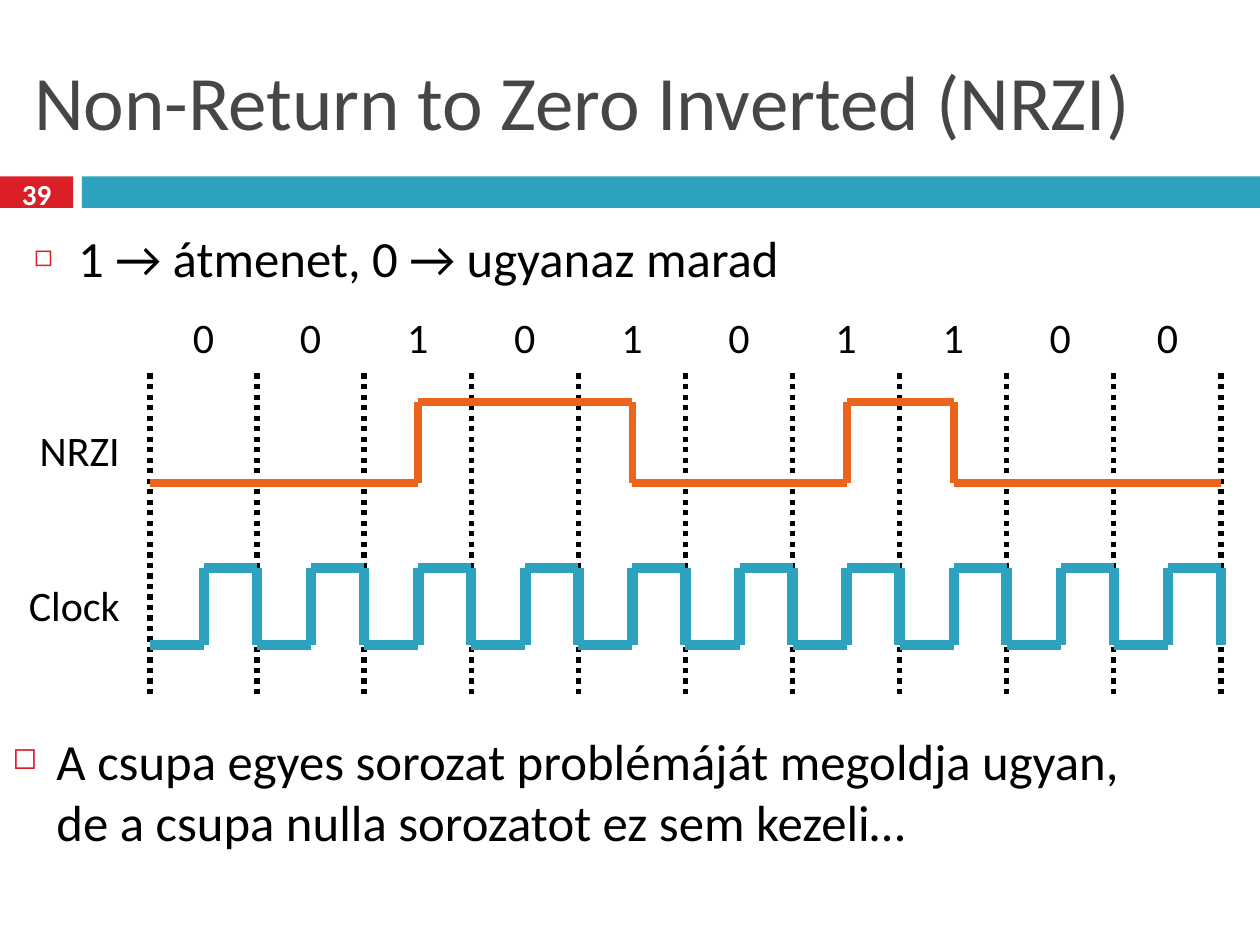
from itertools import pairwise
from lxml.etree import SubElement
from pptx import Presentation
from pptx.dml.color import RGBColor
from pptx.enum.dml import MSO_LINE
from pptx.enum.shapes import MSO_CONNECTOR, MSO_SHAPE
from pptx.enum.text import MSO_ANCHOR, MSO_AUTO_SIZE, PP_ALIGN
from pptx.oxml.ns import qn
from pptx.util import Inches, Pt

COLORS = {
    "title": "464646",
    "text": "000000",
    "white": "FFFFFF",
    "accent": "DA1F28",
    "teal": "2DA2BF",
    "orange": "EB641B",
}
FONT = "Calibri"
BITS = "0010101100"


def rgb(name):
    return RGBColor.from_string(COLORS[name])


def place(sp, box):
    sp.left, sp.top, sp.width, sp.height = [Inches(v) for v in box]


def add_run(p, text, size, color="text", bold=False):
    r = p.add_run()
    r.text = text
    r.font.name = FONT
    r.font.size = Pt(size)
    r.font.bold = bold
    r.font.color.rgb = rgb(color)


def add_line(s, start, end, color, width, dash=None):
    sp = s.shapes.add_connector(
        MSO_CONNECTOR.STRAIGHT, *[Inches(v) for v in (*start, *end)])
    sp.line.color.rgb = rgb(color)
    sp.line.width = Pt(width)
    if dash:
        sp.line.dash_style = dash
    SubElement(sp._element.spPr, qn("a:effectLst"))


def add_wave(s, points, color, width):
    for start, end in pairwise(points):
        add_line(s, start, end, color, width)


def add_label(s, box, text, align):
    sp = s.shapes.add_textbox(*[Inches(v) for v in box])
    tf = sp.text_frame
    tf.word_wrap = False
    p = tf.paragraphs[0]
    p.alignment = align
    add_run(p, text, 24)


def fill_bullet(tf, lines):
    tf.word_wrap = True
    tf.auto_size = MSO_AUTO_SIZE.NONE
    p = tf.paragraphs[0]
    p.space_before = Pt(7)
    for i, line in enumerate(lines):
        if i:
            p.add_line_break()
        add_run(p, line, 29)
    pPr = p._p.get_or_add_pPr()
    pPr.set("marL", str(Inches(0.35)))
    pPr.set("indent", str(Inches(-0.35)))
    clr = SubElement(pPr, qn("a:buClr"))
    SubElement(clr, qn("a:srgbClr"), val=COLORS["accent"])
    SubElement(pPr, qn("a:buSzPct"), val="60000")
    SubElement(pPr, qn("a:buChar"), char="◻")


def add_title(s, box):
    sp = s.shapes.title
    place(sp, box)
    tf = sp.text_frame
    tf.auto_size = MSO_AUTO_SIZE.NONE
    tf.vertical_anchor = MSO_ANCHOR.MIDDLE
    p = tf.paragraphs[0]
    p.alignment = PP_ALIGN.LEFT
    add_run(p, "Non-Return to Zero Inverted (NRZI)", 44, "title")


def add_number_band(s, box):
    x, y, w, h = box
    number_w, gap = 0.58, 0.07
    bar_x = number_w + gap
    for left, width, color in ((x, number_w, "accent"),
                               (x + bar_x, w - bar_x, "teal")):
        sp = s.shapes.add_shape(
            MSO_SHAPE.RECTANGLE, *[Inches(v) for v in (left, y, width, h)])
        sp.shadow.inherit = False
        sp.fill.solid()
        sp.fill.fore_color.rgb = rgb(color)
        sp.line.fill.background()
    sp = s.shapes.add_textbox(
        *[Inches(v) for v in (x, y - 0.03, number_w, 0.33)])
    tf = sp.text_frame
    tf.word_wrap = True
    tf.vertical_anchor = MSO_ANCHOR.MIDDLE
    p = tf.paragraphs[0]
    p.alignment = PP_ALIGN.CENTER
    add_run(p, "39", 16.6, "white", True)


def add_rule(s, box):
    sp = s.placeholders[1]
    place(sp, box)
    fill_bullet(sp.text_frame, ["1 → átmenet, 0 → ugyanaz marad"])


def add_timing_diagram(s, box):
    x, y, w, h = box
    step = w / len(BITS)
    edges = [x + i * step for i in range(len(BITS) + 1)]
    mids = [left + 0.43 for left in edges[:-1]]
    for edge in edges:
        add_line(s, (edge, y + h), (edge, y), "text", 3, MSO_LINE.ROUND_DOT)

    high, low = y + 1.58, y + 2.19
    clock = [(x, low)]
    for mid, end in zip(mids, edges[1:]):
        clock += [(mid, low), (mid, high), (end, high), (end, low)]
    add_wave(s, clock, "teal", 6)

    level, other = y + 0.9, y + 0.26
    nrzi = [(x, level)]
    for mid, bit in zip(mids, BITS):
        if bit == "1":
            nrzi += [(mid, level), (mid, other)]
            level, other = other, level
    nrzi.append((x + w, level))
    add_wave(s, nrzi, "orange", 4.5)

    for text, top in (("NRZI", y + 0.39), ("Clock", y + 1.62)):
        add_label(s, (x - 1.07, top, 0.93, 0.5), text, PP_ALIGN.RIGHT)
    for mid, bit in zip(mids, BITS):
        add_label(s, (mid - 0.2, y - 0.51, 0.39, 0.5), bit, PP_ALIGN.CENTER)


def add_conclusion(s, box):
    sp = s.shapes.add_textbox(*[Inches(v) for v in box])
    fill_bullet(sp.text_frame, [
        "A csupa egyes sorozat problémáját megoldja ugyan,",
        "de a csupa nulla sorozatot ez sem kezeli…",
    ])


def main():
    prs = Presentation()
    prs.slide_width = Inches(10)
    prs.slide_height = Inches(7.5)
    s = prs.slides.add_slide(prs.slide_layouts[1])
    add_number_band(s, (0, 1.4, 10, 0.25))
    add_title(s, (0.17, 0.25, 9.67, 1.08))
    add_rule(s, (0.17, 1.75, 9.67, 0.67))
    add_timing_diagram(s, (1.19, 2.93, 8.5, 2.58))
    add_conclusion(s, (0, 5.74, 10, 1.32))
    prs.save("out.pptx")


if __name__ == "__main__":
    main()
